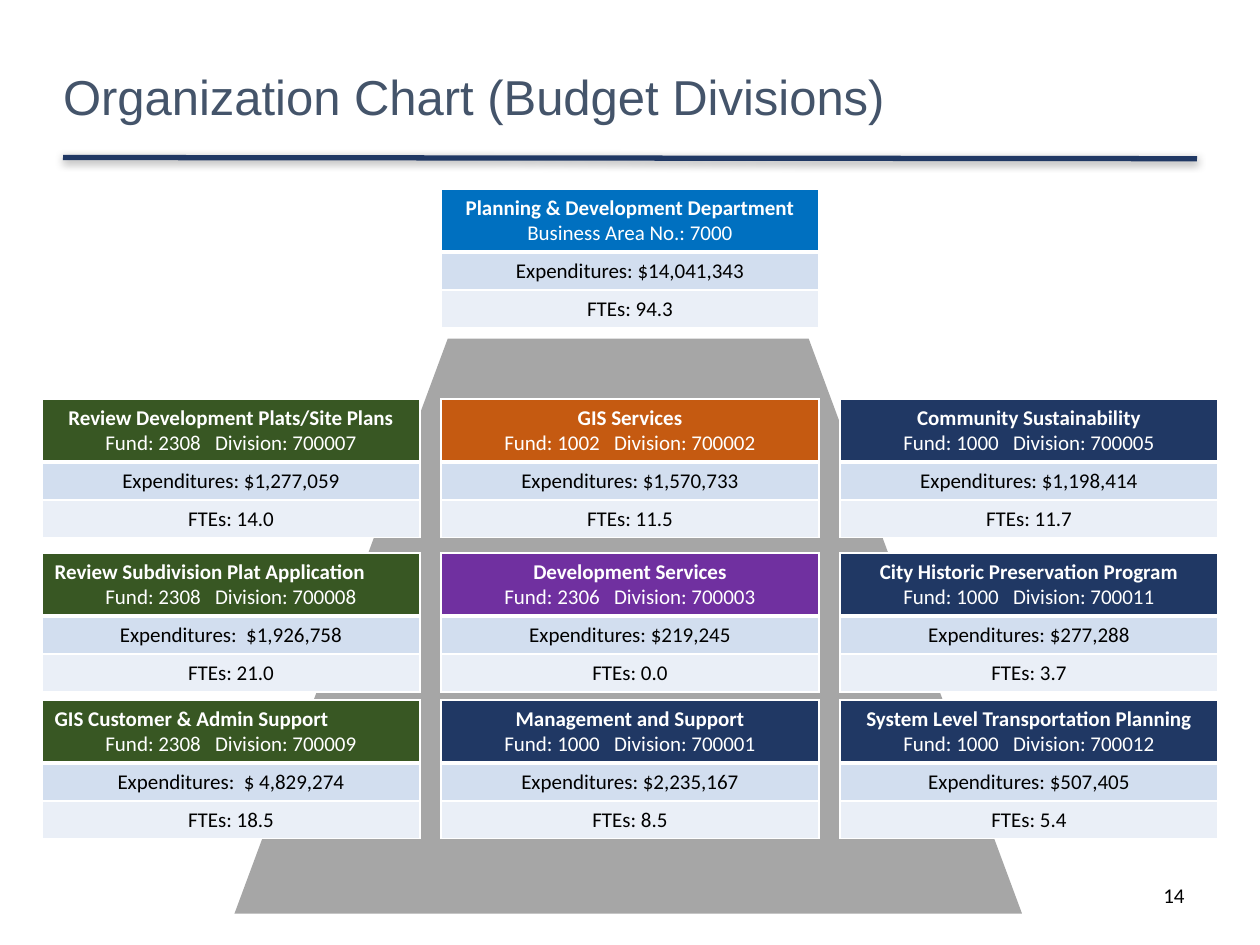
import pptx
import pptx.util
import pptx.dml.color
import pptx.enum.shapes
import pptx.enum.text
import pptx.oxml
import pptx.oxml.ns

Pt = pptx.util.Pt
ALIGN = pptx.enum.text.PP_ALIGN
ANCHOR = pptx.enum.text.MSO_ANCHOR

COLORS = {
    "white": "FFFFFF",
    "black": "000000",
    "title": "44546A",
    "navy": "203864",
    "gray": "A6A6A6",
    "blue": "0070C0",
    "green": "385723",
    "orange": "C55A11",
    "purple": "7030A0",
    "band_dark": "D2DEEF",
    "band_light": "EAEFF7",
}

COLUMNS = [24 + 228 * index for index in range(3)]
LEVELS = [108, 228, 316, 400]
CARD_WIDTH = 216
ROW_HEIGHTS = [36, 21.6, 21.6]

DIVISIONS = [
    (0, 1, "green", "Review Development Plats/Site Plans", 2308, 700007, "$1,277,059", "14.0"),
    (1, 1, "orange", "GIS Services", 1002, 700002, "$1,570,733", "11.5"),
    (2, 1, "navy", "Community Sustainability", 1000, 700005, "$1,198,414", "11.7"),
    (0, 2, "green", "Review Subdivision Plat Application", 2308, 700008, " $1,926,758", "21.0"),
    (1, 2, "purple", "Development Services", 2306, 700003, "$219,245", "0.0"),
    (2, 2, "navy", "City Historic Preservation Program", 1000, 700011, "$277,288", "3.7"),
    (0, 3, "green", "GIS Customer & Admin Support", 2308, 700009, " $ 4,829,274", "18.5"),
    (1, 3, "navy", "Management and Support", 1000, 700001, "$2,235,167", "8.5"),
    (2, 3, "navy", "System Level Transportation Planning", 1000, 700012, "$507,405", "5.4"),
]
LEFT_ALIGNED = {700008, 700009}


def rgb(color):
    return pptx.dml.color.RGBColor.from_string(COLORS[color])


def apply(target, values):
    for name, value in values.items():
        setattr(target, name, value)


def write(para, text, color, align=ALIGN.CENTER, **font):
    para.alignment = align
    span = para.add_run()
    span.text = text
    apply(span.font, {"name": "Calibri", "size": Pt(12), "bold": False, **font})
    span.font.color.rgb = rgb(color)


def add_title(page, text):
    title = page.shapes.title
    apply(title, {"left": Pt(36), "top": Pt(24), "width": Pt(495), "height": Pt(66)})
    apply(title.text_frame, {
        "margin_left": 0, "margin_top": 0, "margin_right": 0, "margin_bottom": 0,
        "vertical_anchor": ANCHOR.MIDDLE, "word_wrap": True,
        "auto_size": pptx.enum.text.MSO_AUTO_SIZE.NONE,
    })
    para = title.text_frame.paragraphs[0]
    para.line_spacing = 0.9
    write(para, text, "title", ALIGN.LEFT, name="Arial", size=Pt(28))


def add_rule(page):
    rule = page.shapes.add_connector(
        pptx.enum.shapes.MSO_CONNECTOR.STRAIGHT, Pt(36), Pt(90), Pt(684), Pt(90.7))
    rule.line.color.rgb = rgb("navy")
    rule.line.width = Pt(3)
    rule._element.spPr.append(pptx.oxml.parse_xml(
        f'<a:effectLst {pptx.oxml.ns.nsdecls("a")}>'
        f'<a:outerShdw blurRad="{Pt(5)}" dist="{Pt(1.6)}" dir="5400000" rotWithShape="0">'
        f'<a:srgbClr val="{COLORS["black"]}"><a:alpha val="38000"/></a:srgbClr>'
        '</a:outerShdw></a:effectLst>'))


def add_trapezoid(page):
    trapezoid = page.shapes.add_shape(
        pptx.enum.shapes.MSO_SHAPE.TRAPEZOID, Pt(134), Pt(193.5), Pt(450), Pt(328.5))
    trapezoid.adjustments[0] = 0.371
    trapezoid.shadow.inherit = False
    trapezoid.fill.solid()
    trapezoid.fill.fore_color.rgb = rgb("gray")
    trapezoid.line.fill.background()


def add_page_number(page, text):
    box = page.shapes.add_textbox(Pt(516), Pt(500.5), Pt(168), Pt(29))
    box.text_frame.word_wrap = True
    write(box.text_frame.paragraphs[0], text, "black", ALIGN.RIGHT)


def set_borders(cell, widths):
    properties = cell._tc.get_or_add_tcPr()
    for side, width in widths.items():
        properties.append(pptx.oxml.parse_xml(
            f'<a:ln{side} {pptx.oxml.ns.nsdecls("a")} w="{Pt(width)}"><a:solidFill>'
            f'<a:srgbClr val="{COLORS["white"]}"/></a:solidFill></a:ln{side}>'))


def add_card(page, column, level, color, name, detail, expenditures, ftes, align=ALIGN.CENTER):
    table = page.shapes.add_table(
        3, 1, Pt(COLUMNS[column]), Pt(LEVELS[level]),
        Pt(CARD_WIDTH), Pt(sum(ROW_HEIGHTS))).table
    for row, height in zip(table.rows, ROW_HEIGHTS):
        row.height = Pt(height)

    header, spending, staffing = [table.cell(index, 0) for index in range(3)]
    for cell, fill, top, bottom in [
        (header, color, 1, 3),
        (spending, "band_dark", 3, 1),
        (staffing, "band_light", 1, 1),
    ]:
        set_borders(cell, {"L": 1, "R": 1, "T": top, "B": bottom})
        cell.fill.solid()
        cell.fill.fore_color.rgb = rgb(fill)

    write(header.text_frame.paragraphs[0], name, "white", align, bold=True)
    write(header.text_frame.add_paragraph(), detail, "white")
    write(spending.text_frame.paragraphs[0], f"Expenditures: {expenditures}", "black")
    write(staffing.text_frame.paragraphs[0], f"FTEs: {ftes}", "black")


def main():
    deck = pptx.Presentation()
    apply(deck, {"slide_width": Pt(720), "slide_height": Pt(540)})
    page = deck.slides.add_slide(deck.slide_layouts[5])
    add_rule(page)
    add_trapezoid(page)
    add_title(page, "Organization Chart (Budget Divisions)")
    add_page_number(page, "14")
    add_card(page, 1, 0, "blue", "Planning & Development Department",
             "Business Area No.: 7000", "$14,041,343", "94.3")
    for column, level, color, name, fund, division, expenditures, ftes in DIVISIONS:
        align = ALIGN.LEFT if division in LEFT_ALIGNED else ALIGN.CENTER
        add_card(page, column, level, color, name,
                 f"Fund: {fund}   Division: {division}", expenditures, ftes, align)
    deck.save("out.pptx")


if __name__ == "__main__":
    main()
